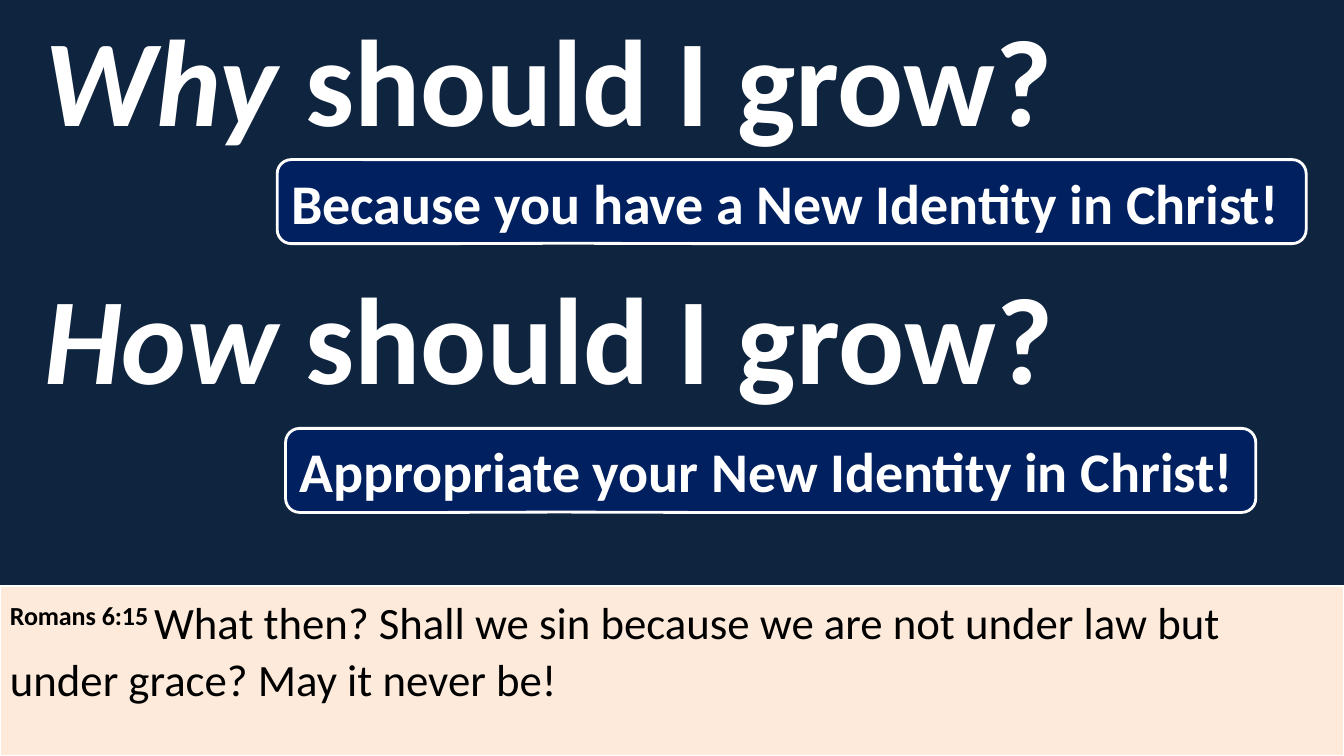
from dataclasses import dataclass

import pptx
import pptx.dml.color
import pptx.enum.shapes
import pptx.enum.text
import pptx.util

PX = 9525
COLORS = {
    "night": "0F243E",
    "navy": "002060",
    "peach": "FDEADA",
    "white": "FFFFFF",
    "black": "000000",
}
SHAPES = pptx.enum.shapes.MSO_SHAPE
ANCHOR = pptx.enum.text.MSO_ANCHOR
ALIGN = pptx.enum.text.PP_ALIGN
TITLE_FORMAT = {"name": "Calibri", "size": pptx.util.Pt(88), "bold": True}
ANSWER_FORMAT = {"name": "Calibri", "size": pptx.util.Pt(40), "bold": True}
VERSE_FORMAT = {"name": "Calibri", "size": pptx.util.Pt(32)}
CALLOUT_ADJUSTMENTS = (-0.219, 0.496, 0.167)


@dataclass(frozen=True)
class Box:
    left: int
    top: int
    width: int
    height: int

    def emu(self) -> tuple[int, ...]:
        return tuple(n * PX for n in (self.left, self.top, self.width, self.height))


@dataclass(frozen=True)
class Question:
    word: str
    title_box: Box
    answer: str
    answer_box: Box


QUESTIONS = (
    Question("Why", Box(24, 10, 1024, 127),
             "Because you have a New Identity in Christ!", Box(264, 152, 980, 80)),
    Question("How", Box(24, 256, 1024, 127),
             "Appropriate your New Identity in Christ!", Box(272, 408, 924, 80)),
)
VERSE_BOX = Box(0, 558, 1280, 162)


def rgb(color: str) -> pptx.dml.color.RGBColor:
    return pptx.dml.color.RGBColor.from_string(COLORS[color])


def add_run(paragraph, text: str, color: str, formats: dict):
    run = paragraph.add_run()
    run.text = text
    for attribute, value in formats.items():
        setattr(run.font, attribute, value)
    run.font.color.rgb = rgb(color)
    return run


def prepare_text(shape, anchor, alignment):
    frame = shape.text_frame
    frame.word_wrap = True
    frame.vertical_anchor = anchor
    paragraph = frame.paragraphs[0]
    paragraph.alignment = alignment
    return paragraph


def add_panel(slide, kind, box: Box, fill: str, line_width: float):
    panel = slide.shapes.add_shape(kind, *box.emu())
    panel.shadow.inherit = False
    panel.fill.solid()
    panel.fill.fore_color.rgb = rgb(fill)
    panel.line.color.rgb = rgb("white")
    panel.line.width = pptx.util.Pt(line_width)
    return panel


def add_verse(slide) -> None:
    panel = add_panel(slide, SHAPES.RECTANGLE, VERSE_BOX, "peach", 1.5)
    paragraph = prepare_text(panel, ANCHOR.TOP, ALIGN.LEFT)
    paragraph.line_spacing = 1.07
    reference = add_run(paragraph, "Romans 6:15 ", "black", VERSE_FORMAT | {"bold": True})
    reference.font._element.set("baseline", "30000")
    add_run(paragraph,
            "What then? Shall we sin because we are not under law but under grace? "
            "May it never be!", "black", VERSE_FORMAT)


def add_question(slide, question: Question) -> None:
    title = slide.shapes.add_textbox(*question.title_box.emu())
    paragraph = prepare_text(title, ANCHOR.MIDDLE, ALIGN.CENTER)
    add_run(paragraph, question.word, "white", TITLE_FORMAT | {"italic": True})
    add_run(paragraph, " should I grow? ", "white", TITLE_FORMAT)

    callout = add_panel(slide, SHAPES.ROUNDED_RECTANGULAR_CALLOUT,
                        question.answer_box, "navy", 2)
    for index, adjustment in enumerate(CALLOUT_ADJUSTMENTS):
        callout.adjustments[index] = adjustment
    paragraph = prepare_text(callout, ANCHOR.MIDDLE, ALIGN.LEFT)
    add_run(paragraph, question.answer, "white", ANSWER_FORMAT)


def main() -> None:
    deck = pptx.Presentation()
    deck.slide_width = 1280 * PX
    deck.slide_height = 720 * PX
    slide = deck.slides.add_slide(deck.slide_layouts[6])
    slide.background.fill.solid()
    slide.background.fill.fore_color.rgb = rgb("night")
    add_verse(slide)
    for question in QUESTIONS:
        add_question(slide, question)
    deck.save("out.pptx")


if __name__ == "__main__":
    main()
